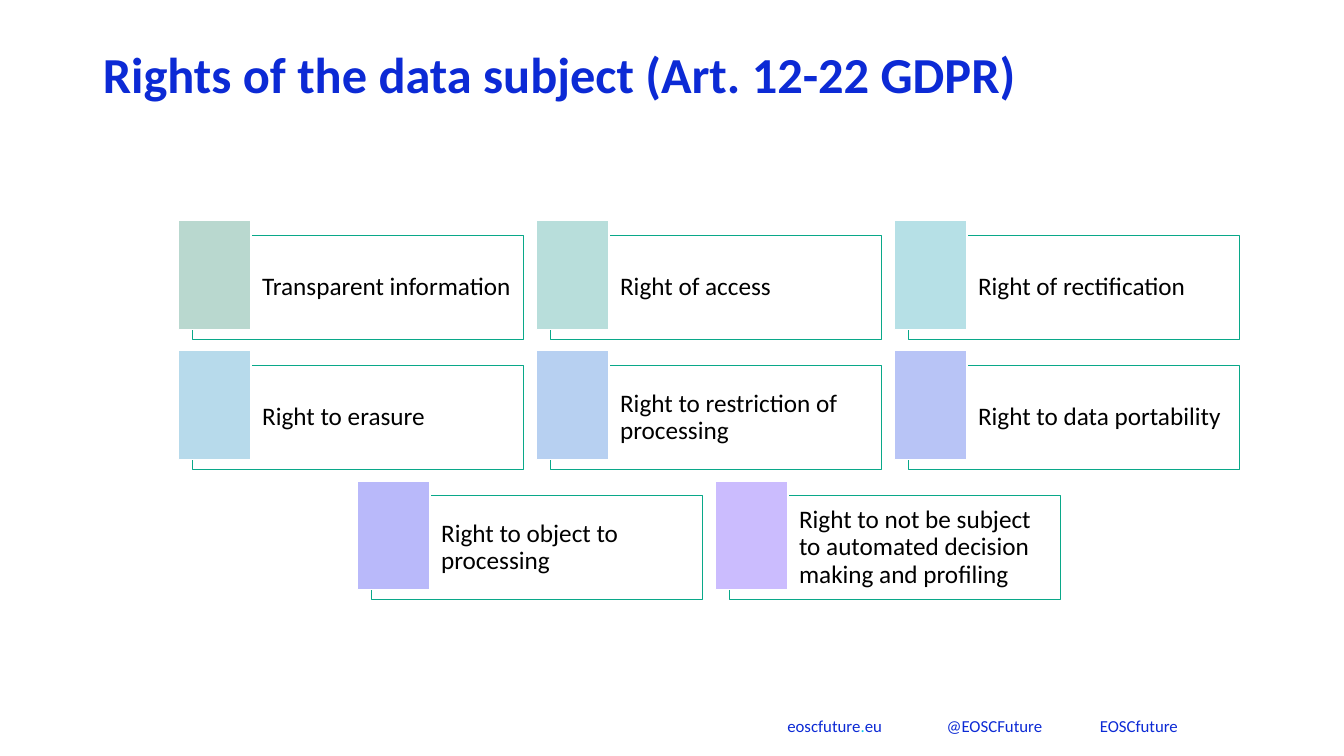
from pptx import Presentation
from pptx.dml.color import RGBColor
from pptx.enum.shapes import MSO_SHAPE
from pptx.enum.text import MSO_ANCHOR, PP_ALIGN
from pptx.oxml.ns import qn
from pptx.util import Inches, Pt
from lxml.etree import SubElement

RIGHTS = [
    [("Transparent information", "B9D8CF"),
     ("Right of access", "B8DEDB"),
     ("Right of rectification", "B6E0E6")],
    [("Right to erasure", "B7DAEB"),
     ("Right to restriction of processing", "B7D0F1"),
     ("Right to data portability", "B8C4F6")],
    [("Right to object to processing", "B9B9FA"),
     ("Right to not be subject to automated decision making and profiling", "CBBCFE")],
]
COLUMNS = 3
GRID_LEFT, GRID_TOP = 1.77, 2.19
COLUMN_PITCH, ROW_PITCH = 3.55, 1.29


def color(hex_string):
    return RGBColor.from_string(hex_string)


class SlideBuilder:
    font = "Calibri"
    blue = "0C2AD5"
    cyan = "08C8E9"
    green = "09A889"
    white = "FFFFFF"
    black = "000000"

    def __init__(self, deck):
        self.page = deck.slides.add_slide(deck.slide_layouts[5])

    def style(self, span, size, hex_string, bold=False):
        span.font.name = self.font
        span.font.size = Pt(size)
        span.font.bold = bold
        span.font.color.rgb = color(hex_string)

    def place_text(self, frame, text, size, hex_string, bold=False):
        frame.word_wrap = True
        frame.vertical_anchor = MSO_ANCHOR.MIDDLE
        frame.text = text
        para = frame.paragraphs[0]
        para.alignment = PP_ALIGN.LEFT
        para.line_spacing = 0.9
        self.style(para.runs[0], size, hex_string, bold)

    def title(self, text):
        box = self.page.shapes.title
        box.left, box.top = Inches(0.92), Inches(0.17)
        box.width, box.height = Inches(12.24), Inches(1.19)
        self.place_text(box.text_frame, text, 36, self.blue, True)

    def rectangle(self, left, top, width, height, fill, line, line_width):
        box = self.page.shapes.add_shape(
            MSO_SHAPE.RECTANGLE, Inches(left), Inches(top), Inches(width), Inches(height))
        box.shadow.inherit = False
        box.fill.solid()
        box.fill.fore_color.rgb = color(fill)
        box.line.color.rgb = color(line)
        box.line.width = Pt(line_width)
        return box

    def card(self, left, top, text, accent):
        box = self.rectangle(left + 0.14, top + 0.15, 3.28, 1.03, self.white, self.green, 0.75)
        fill = box.fill._xPr.find(qn("a:solidFill"))
        SubElement(fill[0], qn("a:alpha"), val="40000")
        frame = box.text_frame
        frame.margin_left = Inches(0.69)
        frame.margin_top = frame.margin_right = frame.margin_bottom = Inches(0.07)
        self.place_text(frame, text, 18, self.black)
        self.rectangle(left, top, 0.72, 1.08, accent, self.white, 1)

    def footer(self, pieces, tab_stops):
        box = self.page.shapes.add_textbox(Inches(7.71), Inches(7.05), Inches(4.21), Inches(0.3))
        box.text_frame.word_wrap = True
        para = box.text_frame.paragraphs[0]
        tabs = SubElement(para._p.get_or_add_pPr(), qn("a:tabLst"))
        for stop in tab_stops:
            SubElement(tabs, qn("a:tab"), pos=str(Inches(stop)), algn="l")
        for text, hex_string in pieces:
            span = para.add_run()
            span.text = text
            self.style(span, 12, hex_string)


def main():
    deck = Presentation()
    deck.slide_width, deck.slide_height = Inches(13.33), Inches(7.5)
    slide = SlideBuilder(deck)
    slide.footer([("eoscfuture", slide.blue), (".", slide.cyan),
                  ("eu\t@EOSCFuture\tEOSCfuture", slide.blue)], [1.58, 3.1])
    slide.title("Rights of the data subject (Art. 12-22 GDPR)")
    for row, rights in enumerate(RIGHTS):
        indent = (COLUMNS - len(rights)) / 2
        for column, (text, accent) in enumerate(rights):
            slide.card(GRID_LEFT + (column + indent) * COLUMN_PITCH,
                       GRID_TOP + row * ROW_PITCH, text, accent)
    deck.save("out.pptx")


if __name__ == "__main__":
    main()
